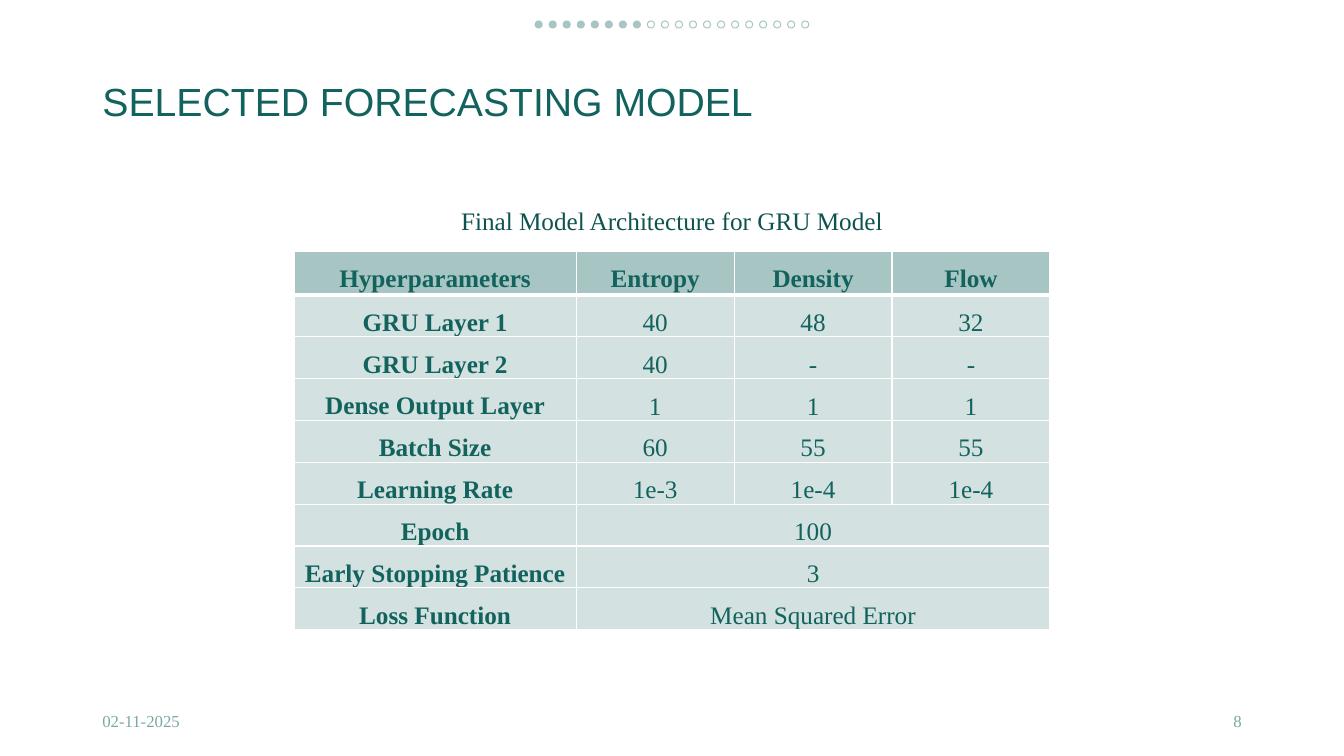
from lxml import etree
from pptx import Presentation
from pptx.dml.color import RGBColor
from pptx.enum.shapes import MSO_SHAPE
from pptx.enum.text import MSO_ANCHOR, PP_ALIGN
from pptx.oxml.ns import qn
from pptx.util import Inches, Pt

LEFT, CENTER, RIGHT = PP_ALIGN.LEFT, PP_ALIGN.CENTER, PP_ALIGN.RIGHT
TOP, MIDDLE = MSO_ANCHOR.TOP, MSO_ANCHOR.MIDDLE
OVAL = MSO_SHAPE.OVAL

TEAL = RGBColor(0x12, 0x62, 0x5E)
DARK_TEAL = RGBColor(0x0E, 0x53, 0x4F)
SOFT_TEAL = RGBColor(0x7C, 0xA9, 0xA5)
HEADER_TEAL = RGBColor(0xA7, 0xC5, 0xC2)
PALE_TEAL = RGBColor(0xD3, 0xE2, 0xE0)
WHITE = RGBColor(0xFF, 0xFF, 0xFF)

COLUMNS, ROWS = 160, 90
MARGIN = 11
FOOTER_ROW = 83.4
TEXT_ROWS = 4.8
TITLE_FONT, BODY_FONT = "Arial", "Times New Roman"
TITLE_ONLY = 5

HYPERPARAMETERS = [
    ["Hyperparameters", "Entropy", "Density", "Flow"],
    ["GRU Layer 1", "40", "48", "32"],
    ["GRU Layer 2", "40", "-", "-"],
    ["Dense Output Layer", "1", "1", "1"],
    ["Batch Size", "60", "55", "55"],
    ["Learning Rate", "1e-3", "1e-4", "1e-4"],
    ["Epoch", "100"],
    ["Early Stopping Patience", "3"],
    ["Loss Function", "Mean Squared Error"],
]


class SlideBuilder:
    """Places styled elements on a slide grid of COLUMNS by ROWS."""

    def __init__(self, deck):
        self.unit = deck.slide_width / COLUMNS
        self.slide = deck.slides.add_slide(deck.slide_layouts[TITLE_ONLY])

    def grid(self, *counts):
        return [round(count * self.unit) for count in counts]

    def style(self, paragraph, size, color, font=BODY_FONT, align=LEFT, bold=False):
        paragraph.alignment = align
        paragraph.font.name = font
        paragraph.font.size = Pt(size)
        paragraph.font.bold = bold
        paragraph.font.color.rgb = color

    def title(self, text, *place):
        heading = self.slide.shapes.title
        heading.left, heading.top, heading.width, heading.height = self.grid(*place)
        frame = heading.text_frame
        frame.text = text
        frame.vertical_anchor = MIDDLE
        frame.paragraphs[0].line_spacing = 0.9
        self.style(frame.paragraphs[0], 28, TEAL, TITLE_FONT)

    def text(self, text, place, size, color, align=LEFT, anchor=MIDDLE, space_after=0):
        frame = self.slide.shapes.add_textbox(*self.grid(*place)).text_frame
        frame.word_wrap = True
        frame.text = text
        frame.vertical_anchor = anchor
        frame.paragraphs[0].space_after = Pt(space_after)
        self.style(frame.paragraphs[0], size, color, align=align)

    def progress(self, current, total, row, diameter, pitch):
        """Centre a row of dots, filled up to the current slide."""
        start = (COLUMNS - (total - 1) * pitch - diameter) / 2
        dots = self.slide.shapes.add_group_shape().shapes
        for index in range(total):
            place = self.grid(start + index * pitch, row, diameter, diameter)
            dot = dots.add_shape(OVAL, *place)
            dot.shadow.inherit = False
            dot.fill.solid()
            dot.fill.fore_color.rgb = HEADER_TEAL if index < current else WHITE
            dot.line.color.rgb = HEADER_TEAL
            dot.line.width = Pt(0.71)

    def border(self, cell, side, points):
        line = etree.SubElement(cell._tc.get_or_add_tcPr(), qn(f"a:ln{side}"), w=str(Pt(points)))
        fill = etree.SubElement(line, qn("a:solidFill"))
        etree.SubElement(fill, qn("a:srgbClr"), val=str(WHITE))

    def cell(self, cell, text, row, column):
        header = row == 0
        for side in "LRTB":
            thick = (row, side) in ((0, "B"), (1, "T"))
            self.border(cell, side, 3 if thick else 1)
        cell.fill.solid()
        cell.fill.fore_color.rgb = HEADER_TEAL if header else PALE_TEAL
        cell.margin_left = cell.margin_right = Inches(0.07)
        cell.margin_top = cell.margin_bottom = 0
        cell.vertical_anchor = TOP if header or column == 0 else MIDDLE
        cell.text = text
        paragraph = cell.text_frame.paragraphs[0]
        paragraph.line_spacing = 1.5
        paragraph.space_after = Pt(8)
        self.style(paragraph, 18, TEAL, align=CENTER, bold=header or column == 0)

    def table(self, records, left, top, widths, header_height, row_height):
        """Draw the records; a short record's last value spans the rest of its row."""
        height = header_height + row_height * (len(records) - 1)
        place = self.grid(left, top, sum(widths), height)
        table = self.slide.shapes.add_table(len(records), len(widths), *place).table
        for column, width in zip(table.columns, self.grid(*widths)):
            column.width = width
        for row, record in enumerate(records):
            table.rows[row].height, = self.grid(row_height if row else header_height)
            for column in range(len(widths)):
                text = record[column] if column < len(record) else ""
                self.cell(table.cell(row, column), text, row, column)
            if len(record) < len(widths):
                table.cell(row, len(record) - 1).merge(table.cell(row, len(widths) - 1))


def main():
    deck = Presentation()
    deck.slide_width, deck.slide_height = Inches(COLUMNS / 12), Inches(ROWS / 12)
    page = SlideBuilder(deck)
    content_width = COLUMNS - 2 * MARGIN
    page.title("SELECTED FORECASTING MODEL", MARGIN, 3.6, content_width, 17.4)
    widths = [33.6, 18.8, 18.8, 18.8]
    page.table(HYPERPARAMETERS, (COLUMNS - sum(widths)) / 2, 29.9, widths, 5.2, 4.9)
    page.text("Final Model Architecture for GRU Model", (40, 23.8, 80, TEXT_ROWS),
              18, DARK_TEAL, CENTER, TOP, space_after=10)
    page.text("02-11-2025", (MARGIN, FOOTER_ROW, 15.8, TEXT_ROWS), 12, SOFT_TEAL)
    page.text("8", (COLUMNS - MARGIN - 9, FOOTER_ROW, 9, TEXT_ROWS), 12, SOFT_TEAL, RIGHT)
    page.progress(current=8, total=20, row=2.5, diameter=0.84, pitch=1.67)
    deck.save("out.pptx")


if __name__ == "__main__":
    main()
